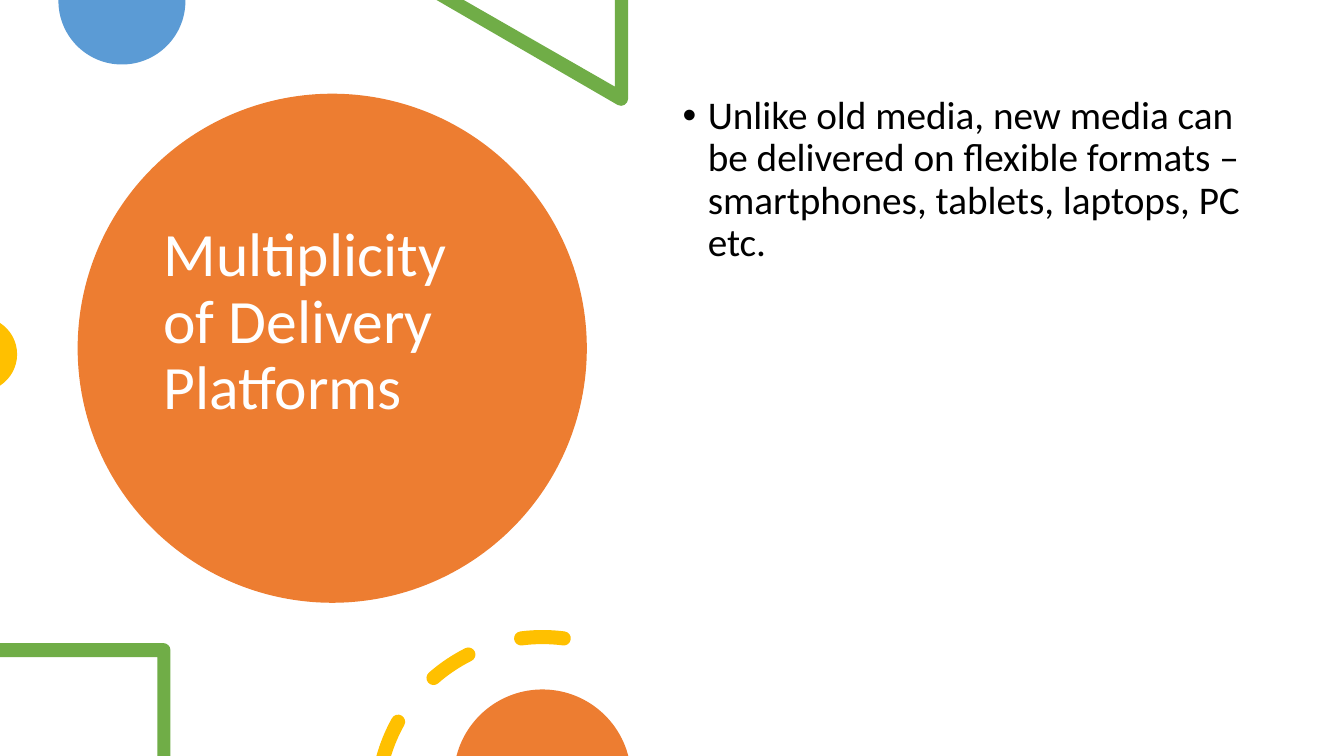
from math import ceil, cos, radians, sin, tan

from lxml import etree
from pptx import Presentation
from pptx.dml.color import RGBColor
from pptx.enum.shapes import MSO_SHAPE
from pptx.enum.text import MSO_ANCHOR, MSO_AUTO_SIZE, PP_ALIGN
from pptx.oxml.ns import qn
from pptx.util import Inches, Pt

ORANGE = RGBColor(0xED, 0x7D, 0x31)
BLUE = RGBColor(0x5B, 0x9B, 0xD5)
GREEN = RGBColor(0x70, 0xAD, 0x47)
YELLOW = RGBColor(0xFF, 0xC0, 0x00)
WHITE = RGBColor(0xFF, 0xFF, 0xFF)
BLACK = RGBColor(0x00, 0x00, 0x00)


def arc(center_x, center_y, radius, start, end):
    """Return a start point, then three marked points for each Bezier curve.

    Degrees run clockwise from the right.
    """
    count = ceil(abs(end - start) / 90)
    step = radians(end - start) / count
    pull = 4 / 3 * tan(step / 4)
    points = [(center_x + radius * cos(radians(start)), center_y + radius * sin(radians(start)))]
    for index in range(count):
        a = radians(start) + index * step
        b = a + step
        for x, y in [(cos(a) - pull * sin(a), sin(a) + pull * cos(a)),
                     (cos(b) + pull * sin(b), sin(b) - pull * cos(b)),
                     (cos(b), sin(b))]:
            points.append((center_x + radius * x, center_y + radius * y, "curve"))
    return points


def paint(shape, color):
    shape.fill.solid()
    shape.fill.fore_color.rgb = color
    shape.line.fill.background()
    shape.shadow.inherit = False


presentation = Presentation()
presentation.slide_width = Inches(13.33)
presentation.slide_height = Inches(7.5)
slide = presentation.slides.add_slide(presentation.slide_layouts[1])
shapes = slide.shapes
title, body = slide.placeholders

# Large circle behind the title
title_circle = shapes.add_shape(
    MSO_SHAPE.OVAL, Inches(0.77), Inches(0.93), Inches(5.05), Inches(5.05))
paint(title_circle, ORANGE)
title._element.addprevious(title_circle._element)

# Title and bullet text
texts = [
    (title, "Multiplicity of Delivery Platforms", (1.52, 1.35, 3.54, 4.45),
     44, WHITE, MSO_ANCHOR.MIDDLE, 0),
    (body, "Unlike old media, new media can be delivered on flexible formats – "
     "smartphones, tablets, laptops, PC etc.", (6.67, 0.9, 5.75, 5.35),
     28, BLACK, MSO_ANCHOR.TOP, 10),
]
for placeholder, text, box, size, color, anchor, space_before in texts:
    for name, value in zip(("left", "top", "width", "height"), box):
        setattr(placeholder, name, Inches(value))
    frame = placeholder.text_frame
    frame.text = text
    frame.auto_size = MSO_AUTO_SIZE.NONE
    frame.vertical_anchor = anchor
    paragraph = frame.paragraphs[0]
    paragraph.alignment = PP_ALIGN.LEFT
    paragraph.line_spacing = 0.9
    paragraph.space_before = Pt(space_before)
    font = paragraph.runs[0].font
    font.name = "Calibri"
    font.size = Pt(size)
    font.color.rgb = color

title.text_frame.paragraphs[0].add_line_break()
bullet_properties = body.text_frame.paragraphs[0]._p.get_or_add_pPr()
bullet_properties.set("marL", str(Inches(0.25)))
bullet_properties.set("indent", str(Inches(-0.25)))

# Dashes of a ring around the bottom circle
ring_x, ring_y, ring_radius, half_width = 5.38, 7.96, 1.64, 0.07
outer, inner = ring_radius + half_width, ring_radius - half_width
dashes = []
for start, end in [(195.5, 209.2), (228.8, 243.4), (262.6, 277.4)]:
    cut_by_edge = start < 200
    inner_start = 197 if cut_by_edge else start
    cap_x, cap_y = arc(ring_x, ring_y, ring_radius, end, end + 1)[0]
    dash = arc(ring_x, ring_y, outer, start, end)
    dash += arc(cap_x, cap_y, half_width, end, end + 180)[1:]
    dash += arc(ring_x, ring_y, inner, end, inner_start)[1:]
    if not cut_by_edge:
        cap_x, cap_y = arc(ring_x, ring_y, ring_radius, start, end)[0]
        dash += arc(cap_x, cap_y, half_width, start + 180, start + 360)[1:]
    dashes.append(dash)

# Decorations cut off by the slide edges
top_circle = [(1.84, 0), (0.58, 0)] + arc(1.21, 0.01, 0.63, 180, 0)
triangle = [(6.23, 0), (6.1, 0), (6.1, 0.86), (4.6, 0), (4.33, 0)]
triangle += arc(6.16, 0.98, 0.07, 118, 0)
left_circle = arc(-0.2, 3.515, 0.37, -57, 57)
square = [(0, 6.38), (0, 6.52), (1.56, 6.52), (1.56, 7.5), (1.69, 7.5)]
square += arc(1.62, 6.45, 0.07, 0, -90)
bottom_circle = arc(5.38, 7.72, 0.88, 194.5, 345.5)

decorations = [
    ([top_circle], BLUE),
    ([triangle], GREEN),
    ([left_circle], YELLOW),
    ([square], GREEN),
    (dashes, YELLOW),
    ([bottom_circle], ORANGE),
]
for outlines, color in decorations:
    contours = [[(Inches(point[0]), Inches(point[1])) for point in outline]
                for outline in outlines]
    builder = shapes.build_freeform(*contours[0][0])
    builder.add_line_segments(contours[0][1:])
    for contour in contours[1:]:
        builder.move_to(*contour[0])
        builder.add_line_segments(contour[1:])
    decoration = builder.convert_to_shape()
    paint(decoration, color)

    # Join each three marked points into one Bezier curve
    geometry = next(decoration._element.iter(qn("a:pathLst")))[0]
    steps = [child for child in geometry if child.tag != qn("a:close")]
    marks = [len(point) == 3 for outline in outlines for point in outline]
    curve_steps = [step for step, marked in zip(steps, marks) if marked]
    for index in range(0, len(curve_steps), 3):
        curve = etree.Element(qn("a:cubicBezTo"))
        curve_steps[index].addprevious(curve)
        for step in curve_steps[index:index + 3]:
            curve.append(step[0])
            geometry.remove(step)

presentation.save("out.pptx")
